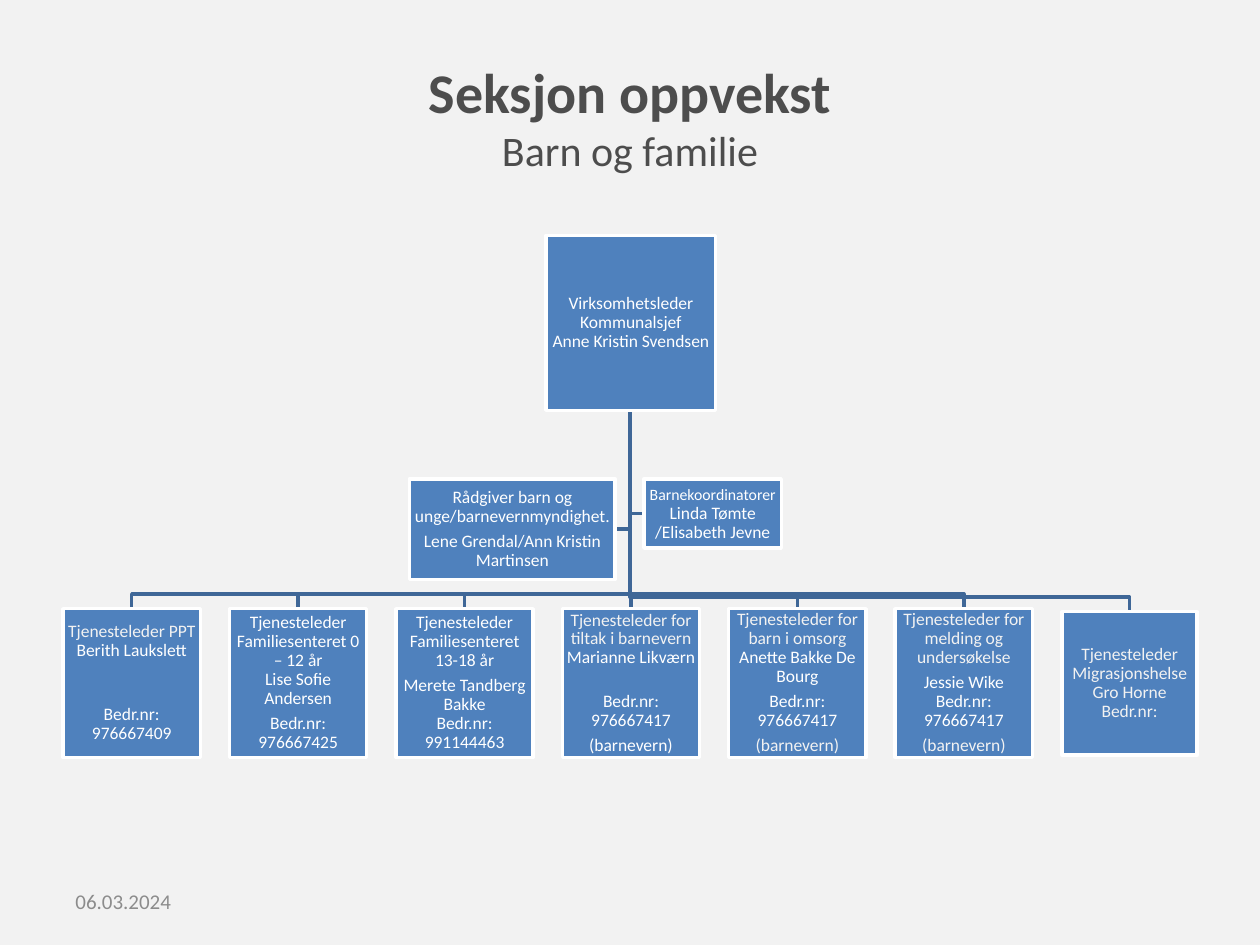
from collections import namedtuple

from pptx import Presentation
from pptx.dml.color import RGBColor
from pptx.enum.shapes import MSO_SHAPE as Shape
from pptx.enum.text import MSO_ANCHOR as Anchor, PP_ALIGN as Align
from pptx.util import Pt

FONT = "Calibri"
BOX_FILL, BRANCH = "4F81BD", "3F6797"
WHITE, PALE = "FFFFFF", "F2F2F2"
TITLE_GREY, DATE_GREY = "4D4D4D", "8C8C8C"

Run = namedtuple("Run", "text color size", defaults=(WHITE, 10))
Para = namedtuple("Para", "runs gap", defaults=(3.5,))
Box = namedtuple("Box", "left top width height")

LEADER = Box(312, 134.5, 97, 100)
ADVISER = Box(234, 273.6, 117.5, 57.6)
COORDINATORS = Box(368, 273.6, 78.5, 39.6)
UNIT_LEFT, UNIT_TOP, UNIT_STEP = 36, 347.8, 95.1
UNIT_WIDTH, UNIT_HEIGHT = 78.5, 85
MIGRATION = Box(607, 349.5, 77, 82)
TRUNK_X = 360
BUS_GAP = 8.4

LEADER_TEXT = [Para([Run("Virksomhetsleder Kommunalsjef\nAnne Kristin Svendsen")])]
ADVISER_TEXT = [
    Para([Run("Rådgiver barn og unge/barnevernmyndighet.")]),
    Para([Run("Lene Grendal/Ann Kristin Martinsen")]),
]
COORDINATORS_TEXT = [
    Para([Run("Barnekoordinatorer", size=9), Run(" Linda Tømte /Elisabeth Jevne")]),
]
UNIT_TEXTS = [
    [Para([Run("Tjenesteleder PPT\n", PALE), Run("Berith Laukslett")], 26),
     Para([Run("Bedr.nr: 976667409")])],
    [Para([Run("Tjenesteleder Familiesenteret 0 – 12 år\nLise Sofie Andersen")]),
     Para([Run("Bedr.nr: 976667425")])],
    [Para([Run("Tjenesteleder Familiesenteret 13-18 år")]),
     Para([Run("Merete Tandberg Bakke\nBedr.nr: 991144463")])],
    [Para([Run("Tjenesteleder for tiltak i barnevern\n", PALE),
           Run("Marianne Likværn")], 14),
     Para([Run("Bedr.nr: 976667417")]),
     Para([Run("(barnevern)")])],
    [Para([Run("Tjenesteleder for\nbarn i omsorg\n", PALE),
           Run("Anette Bakke De Bourg")]),
     Para([Run("Bedr.nr: 976667417")]),
     Para([Run("(barnevern)", PALE)])],
    [Para([Run("Tjenesteleder for melding og undersøkelse", PALE)]),
     Para([Run("Jessie Wike Bedr.nr: 976667417")]),
     Para([Run("(barnevern)", PALE)])],
    [Para([Run("Tjenesteleder\nMigrasjonshelse\nGro Horne\nBedr.nr:", PALE)])],
]


def rgb(hex_color):
    return RGBColor.from_string(hex_color)


def add_run(paragraph, run, bold=False):
    """Add the run, turning each newline into a line break."""
    for index, line in enumerate(run.text.split("\n")):
        if index:
            paragraph.add_line_break()
        if line:
            part = paragraph.add_run()
            part.text = line
            part.font.name = FONT
            part.font.size = Pt(run.size)
            part.font.bold = bold
            part.font.color.rgb = rgb(run.color)


def add_branch(slide, points):
    start, *rest = [(Pt(x), Pt(y)) for x, y in points]
    builder = slide.shapes.build_freeform(*start)
    builder.add_line_segments(rest, close=False)
    branch = builder.convert_to_shape()
    branch.shadow.inherit = False
    branch.fill.background()
    branch.line.color.rgb = rgb(BRANCH)
    branch.line.width = Pt(2)


def add_branch_down(slide, unit):
    center = unit.left + unit.width / 2
    bus = unit.top - BUS_GAP
    add_branch(slide, [(TRUNK_X, LEADER.top + LEADER.height), (TRUNK_X, bus),
                       (center, bus), (center, unit.top)])


def add_branch_aside(slide, aide, edge):
    middle = aide.top + aide.height / 2
    add_branch(slide, [(TRUNK_X, LEADER.top + LEADER.height),
                       (TRUNK_X, middle), (edge, middle)])


def add_role(slide, box, paras):
    role = slide.shapes.add_shape(Shape.RECTANGLE, *map(Pt, box))
    role.shadow.inherit = False
    role.fill.solid()
    role.fill.fore_color.rgb = rgb(BOX_FILL)
    role.line.color.rgb = rgb(WHITE)
    role.line.width = Pt(2)
    frame = role.text_frame
    frame.word_wrap = True
    frame.vertical_anchor = Anchor.MIDDLE
    frame.margin_left = frame.margin_right = Pt(0.7)
    frame.margin_top = frame.margin_bottom = Pt(0.7)
    for index, para in enumerate(paras):
        paragraph = frame.add_paragraph() if index else frame.paragraphs[0]
        paragraph.alignment = Align.CENTER
        paragraph.line_spacing = 0.9
        paragraph.space_after = Pt(para.gap)
        for run in para.runs:
            add_run(paragraph, run)


def set_title(slide):
    title = slide.shapes.title
    title.left, title.top, title.width, title.height = map(Pt, (36.5, 21.5, 647, 90))
    title.text_frame.vertical_anchor = Anchor.MIDDLE
    heading = title.text_frame.paragraphs[0]
    heading.alignment = Align.CENTER
    add_run(heading, Run("Seksjon oppvekst\n", TITLE_GREY, 32), bold=True)
    add_run(heading, Run("Barn og familie", TITLE_GREY, 24))


def add_date(slide):
    date = slide.shapes.add_textbox(*map(Pt, (36, 500.5, 168, 28.8)))
    date.text_frame.word_wrap = True
    date.text_frame.vertical_anchor = Anchor.MIDDLE
    add_run(date.text_frame.paragraphs[0], Run("06.03.2024", DATE_GREY, 12))


def main():
    deck = Presentation()
    deck.slide_width, deck.slide_height = Pt(720), Pt(540)
    slide = deck.slides.add_slide(deck.slide_layouts[5])
    slide.background.fill.solid()
    slide.background.fill.fore_color.rgb = rgb(PALE)
    set_title(slide)

    units = [Box(UNIT_LEFT + i * UNIT_STEP, UNIT_TOP, UNIT_WIDTH, UNIT_HEIGHT)
             for i in range(len(UNIT_TEXTS) - 1)] + [MIGRATION]
    add_branch_aside(slide, COORDINATORS, COORDINATORS.left)
    add_branch_aside(slide, ADVISER, ADVISER.left + ADVISER.width)
    for unit in reversed(units):
        add_branch_down(slide, unit)

    add_role(slide, LEADER, LEADER_TEXT)
    for unit, paras in zip(units, UNIT_TEXTS):
        add_role(slide, unit, paras)
    add_role(slide, ADVISER, ADVISER_TEXT)
    add_role(slide, COORDINATORS, COORDINATORS_TEXT)
    add_date(slide)
    deck.save("out.pptx")


if __name__ == "__main__":
    main()
